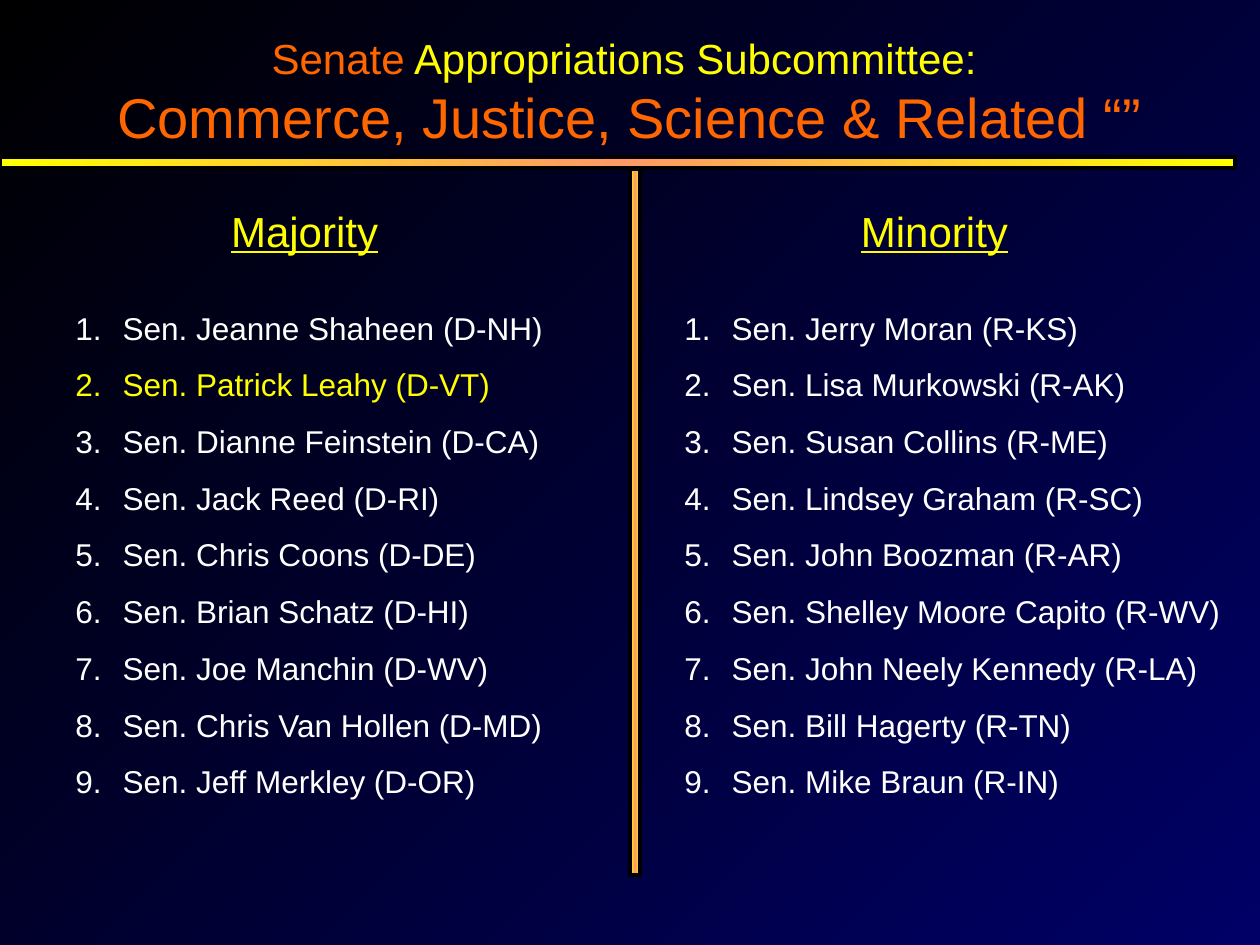
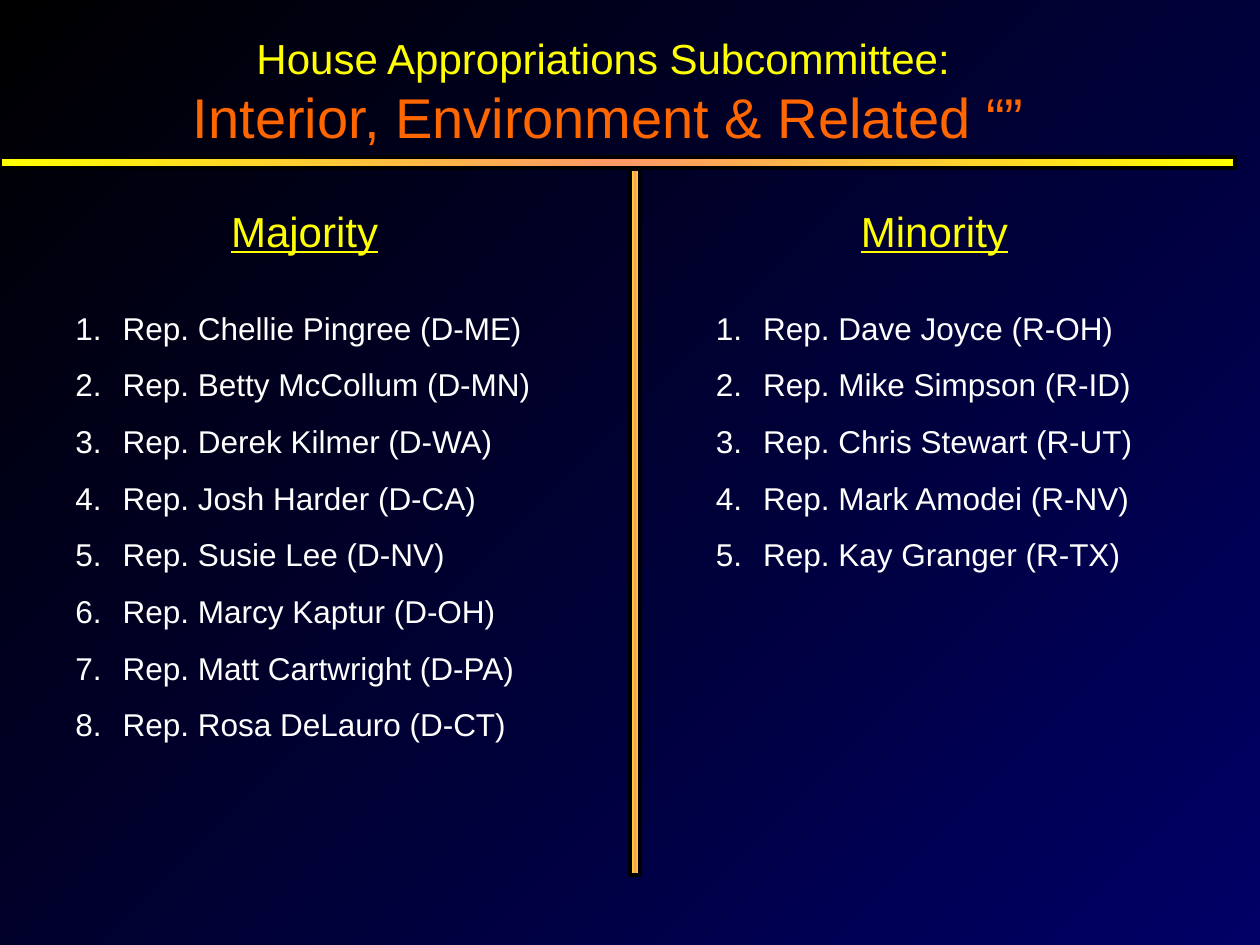
from lxml import etree
from pptx import Presentation
from pptx.dml.color import RGBColor
from pptx.enum import shapes, text
from pptx.oxml import ns
from pptx.util import Inches, Pt

BLACK = RGBColor(0x00, 0x00, 0x00)
NAVY = RGBColor(0x00, 0x00, 0x66)
YELLOW = RGBColor(0xFF, 0xFF, 0x00)
PEACH = RGBColor(0xFF, 0x99, 0x66)
ORANGE = RGBColor(0xFF, 0x66, 0x00)
WHITE = RGBColor(0xFF, 0xFF, 0xFF)
FONT = "Arial"

presentation = Presentation()
presentation.slide_width, presentation.slide_height = Inches(10), Inches(7.5)

# Grid of 120 columns by 90 rows; every box is left, top, width, height in it
COLUMN = presentation.slide_width / 120
ROW = presentation.slide_height / 90
MEMBER_ROWS = 5.46
INSET_ROWS = 1.2
INDENT = round(4.5 * COLUMN)

BARS = [((0, 15, 117.6, 1), 0), ((26.9, 49.2, 67.2, 1), 270)]
HEADINGS = [("Majority", (15.5, 19, 27, 6)), ("Minority", (65.5, 19, 47, 6))]

# Title lines are lists of (wording, colour); member lists are (left, width, names)
SLIDES = [
    {
        "title_width": 120,
        "chamber": [("Senate", ORANGE), (" Appropriations Subcommittee: ", YELLOW)],
        "subject": "Commerce, Justice, Science & Related “”",
        "honorific": "Sen.",
        "highlighted": "Patrick Leahy (D-VT)",
        "members": [
            (6, 54, ["Jeanne Shaheen (D-NH)", "Patrick Leahy (D-VT)",
                     "Dianne Feinstein (D-CA)", "Jack Reed (D-RI)",
                     "Chris Coons (D-DE)", "Brian Schatz (D-HI)",
                     "Joe Manchin (D-WV)", "Chris Van Hollen (D-MD)",
                     "Jeff Merkley (D-OR)"]),
            (64, 55, ["Jerry Moran (R-KS)", "Lisa Murkowski (R-AK)",
                      "Susan Collins (R-ME)", "Lindsey Graham (R-SC)",
                      "John Boozman (R-AR)", "Shelley Moore Capito (R-WV)",
                      "John Neely Kennedy (R-LA)", "Bill Hagerty (R-TN)",
                      "Mike Braun (R-IN)"]),
        ],
    },
    {
        "title_width": 116,
        "chamber": [("House Appropriations Subcommittee: ", YELLOW)],
        "subject": "Interior, Environment & Related “”",
        "honorific": "Rep.",
        "highlighted": None,
        "members": [
            (6, 54, ["Chellie Pingree (D-ME)", "Betty McCollum (D-MN)",
                     "Derek Kilmer (D-WA)", "Josh Harder (D-CA)",
                     "Susie Lee (D-NV)", "Marcy Kaptur (D-OH)",
                     "Matt Cartwright (D-PA)", "Rosa DeLauro (D-CT)"]),
            (67, 52, ["Dave Joyce (R-OH)", "Mike Simpson (R-ID)",
                      "Chris Stewart (R-UT)", "Mark Amodei (R-NV)",
                      "Kay Granger (R-TX)"]),
        ],
    },
]


def set_gradient(fill, parent, colours, angle):
    """Fill with evenly spaced colours at an angle that ignores rotation."""
    fill.solid()
    gradient = etree.Element(ns.qn("a:gradFill"), rotWithShape="0")
    stops = etree.SubElement(gradient, ns.qn("a:gsLst"))
    for index, colour in enumerate(colours):
        position = round(100000 * index / (len(colours) - 1))
        stop = etree.SubElement(stops, ns.qn("a:gs"), pos=str(position))
        etree.SubElement(stop, ns.qn("a:srgbClr"), val=str(colour))
    etree.SubElement(gradient, ns.qn("a:lin"), ang=str(angle * 60000), scaled="1")
    parent.replace(parent.find(ns.qn("a:solidFill")), gradient)


def add_text(slide, box, lines, frame_format, paragraph_format):
    """Add a text box; each line is a list of (wording, size, colour, underline)."""
    left, top, width, height = box
    shape = slide.shapes.add_textbox(round(left * COLUMN), round(top * ROW),
                                     round(width * COLUMN), round(height * ROW))
    frame = shape.text_frame
    frame.word_wrap = True
    for name, value in frame_format.items():
        setattr(frame, name, value)
    for index, line in enumerate(lines):
        paragraph = frame.add_paragraph() if index else frame.paragraphs[0]
        for name, value in paragraph_format.items():
            setattr(paragraph, name, value)
        for wording, size, colour, underline in line:
            run = paragraph.add_run()
            run.text = wording
            font = run.font
            font.name, font.size, font.underline = FONT, Pt(size), underline
            font.color.rgb = colour
    return frame


CENTRED = {"alignment": text.PP_ALIGN.CENTER}
GROWING = {"auto_size": text.MSO_AUTO_SIZE.SHAPE_TO_FIT_TEXT}
MIDDLE = {"vertical_anchor": text.MSO_ANCHOR.MIDDLE}

# Shared background on the master
background = presentation.slide_master.background
background_fill = background.fill
background_fill.solid()
background_properties = presentation.slide_master.element.find(".//" + ns.qn("p:bgPr"))
set_gradient(background_fill, background_properties, [BLACK, NAVY], 45)

for content in SLIDES:
    slide = presentation.slides.add_slide(presentation.slide_layouts[6])

    # Divider bars: below the title and between the two lists
    for (left, top, width, height), rotation in BARS:
        bar = slide.shapes.add_shape(
            shapes.MSO_SHAPE.RECTANGLE, round(left * COLUMN), round(top * ROW),
            round(width * COLUMN), round(height * ROW))
        bar.rotation = rotation
        bar.shadow.inherit = False
        set_gradient(bar.fill, bar.element.spPr, [YELLOW, PEACH, YELLOW], 0)
        bar.line.color.rgb = BLACK
        bar.line.width = Pt(2.25)

    # Column headings
    for heading, box in HEADINGS:
        add_text(slide, box, [[(heading, 24, YELLOW, True)]], GROWING, CENTRED)

    # Numbered member lists
    for left, width, names in content["members"]:
        lines = [[(f"{content['honorific']} {name}", 18,
                   YELLOW if name == content["highlighted"] else WHITE, False)]
                 for name in names]
        box = (left, 27, width, INSET_ROWS + MEMBER_ROWS * len(names))
        frame = add_text(slide, box, lines, GROWING, {"line_spacing": 1.5})
        for paragraph in frame.paragraphs:
            properties = paragraph._p.get_or_add_pPr()
            properties.set("marL", str(INDENT))
            properties.set("indent", str(-INDENT))
            etree.SubElement(properties, ns.qn("a:buFont"), typeface=FONT)
            etree.SubElement(properties, ns.qn("a:buAutoNum"), type="arabicPeriod")

    # Title
    title = [[(wording, 24, colour, False) for wording, colour in content["chamber"]],
             [(content["subject"], 32, ORANGE, False)]]
    add_text(slide, (0, 2, content["title_width"], 13.4), title, MIDDLE, CENTRED)

presentation.save("out.pptx")
